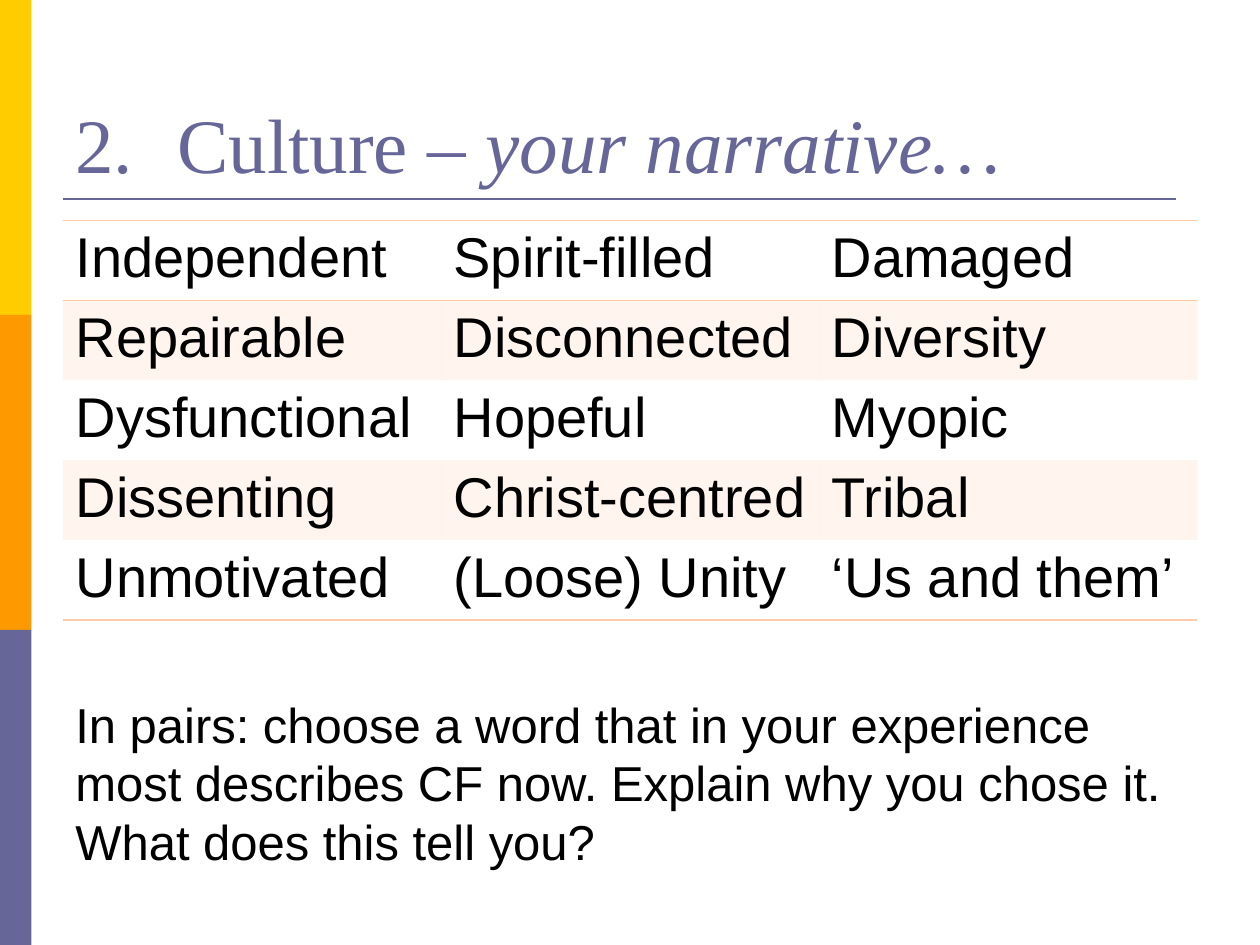
from lxml import etree
from pptx import Presentation
from pptx.dml.color import RGBColor
from pptx.enum.shapes import MSO_CONNECTOR, MSO_SHAPE
from pptx.enum.text import MSO_ANCHOR
from pptx.oxml.ns import qn
from pptx.util import Inches, Pt

RECTANGLE = MSO_SHAPE.RECTANGLE
STRAIGHT = MSO_CONNECTOR.STRAIGHT
TOP = MSO_ANCHOR.TOP
BOTTOM = MSO_ANCHOR.BOTTOM

COLORS = {
    "yellow": "FFCC00",
    "orange": "FF9900",
    "violet": "666699",
    "peach": "FFCAAA",
    "black": "000000",
}
WORDS = [
    ["Independent", "Spirit-filled", "Damaged"],
    ["Repairable", "Disconnected", "Diversity"],
    ["Dysfunctional", "Hopeful", "Myopic"],
    ["Dissenting", "Christ-centred", "Tribal"],
    ["Unmotivated", "(Loose) Unity", "‘Us and them’"],
]
TASK = (
    "In pairs: choose a word that in your experience most describes CF now. "
    "Explain why you chose it. What does this tell you?"
)


class SlideBuilder:
    heading_font = "Times New Roman"
    body_font = "Arial"

    def __init__(self, slide):
        self.slide = slide

    def color(self, name):
        return RGBColor.from_string(COLORS[name])

    def format_run(self, run, size, font, color):
        run.font.size = Pt(size)
        run.font.name = font
        run.font.color.rgb = self.color(color)

    def bar(self, left, top, width, height, color):
        shape = self.slide.shapes.add_shape(
            RECTANGLE, Inches(left), Inches(top), Inches(width), Inches(height))
        shape.shadow.inherit = False
        shape.fill.solid()
        shape.fill.fore_color.rgb = self.color(color)
        shape.line.fill.background()

    def rule(self, left, right, top, color, width):
        connector = self.slide.shapes.add_connector(
            STRAIGHT, Inches(left), Inches(top), Inches(right), Inches(top))
        connector.line.color.rgb = self.color(color)
        connector.line.width = Pt(width)
        etree.SubElement(connector._element.spPr, qn("a:effectLst"))

    def text(self, left, top, width, height, parts, size, font, color, anchor=TOP):
        box = self.slide.shapes.add_textbox(
            Inches(left), Inches(top), Inches(width), Inches(height))
        frame = box.text_frame
        frame.word_wrap = True
        frame.vertical_anchor = anchor
        paragraph = frame.paragraphs[0]
        for content, italic in parts:
            run = paragraph.add_run()
            run.text = content
            run.font.italic = italic
            self.format_run(run, size, font, color)
        return paragraph

    def number(self, paragraph, start, indent):
        properties = paragraph._p.get_or_add_pPr()
        properties.set("marL", str(Inches(indent)))
        properties.set("indent", str(-Inches(indent)))
        etree.SubElement(properties, qn("a:buFont"), typeface="+mj-lt")
        etree.SubElement(
            properties, qn("a:buAutoNum"), type="arabicPeriod", startAt=str(start))

    def border(self, cell, side, color):
        line = etree.SubElement(
            cell._tc.get_or_add_tcPr(), qn(f"a:ln{side}"), w=str(Pt(1)))
        if color is None:
            etree.SubElement(line, qn("a:noFill"))
        else:
            fill = etree.SubElement(line, qn("a:solidFill"))
            etree.SubElement(fill, qn("a:srgbClr"), val=COLORS[color])

    def tint(self, cell, color, percent):
        cell.fill.solid()
        cell.fill.fore_color.rgb = self.color(color)
        value = cell._tc.tcPr.find(f".//{qn('a:solidFill')}[last()]")
        value = cell._tc.tcPr.find(qn("a:solidFill")).find(qn("a:srgbClr"))
        etree.SubElement(value, qn("a:alpha"), val=str(percent * 1000))

    def table(self, left, top, width, row_height, rows, size):
        table = self.slide.shapes.add_table(
            len(rows), len(rows[0]), Inches(left), Inches(top),
            Inches(width), Inches(row_height * len(rows))).table
        table.first_row = False
        table.horz_banding = False
        ruled_edges = {0, 1, len(rows)}
        for row_index, row in enumerate(rows):
            for column_index, word in enumerate(row):
                cell = table.cell(row_index, column_index)
                cell.text_frame.text = word
                run = cell.text_frame.paragraphs[0].runs[0]
                self.format_run(run, size, self.body_font, "black")
                self.border(cell, "L", None)
                self.border(cell, "R", None)
                for side, edge in (("T", row_index), ("B", row_index + 1)):
                    self.border(cell, side, "peach" if edge in ruled_edges else None)
                if row_index % 2:
                    self.tint(cell, "peach", 20)
                else:
                    cell.fill.background()


def main():
    presentation = Presentation()
    presentation.slide_width = Inches(10)
    presentation.slide_height = Inches(7.5)
    builder = SlideBuilder(
        presentation.slides.add_slide(presentation.slide_layouts[6]))

    for index, color in enumerate(("yellow", "orange", "violet")):
        builder.bar(0, 2.5 * index, 0.25, 2.5, color)
    builder.rule(0.5, 9.33, 1.58, "violet", 1.5)
    title = builder.text(
        0.5, 0.3, 9, 1.25, [("Culture – ", False), ("your narrative…", True)],
        44, builder.heading_font, "violet", BOTTOM)
    builder.number(title, 2, 0.81)
    builder.table(0.5, 1.75, 9, 0.6, WORDS, 32)
    builder.text(
        0.5, 5.46, 9, 1.51, [(TASK, False)], 28, builder.body_font, "black")
    presentation.save("out.pptx")


if __name__ == "__main__":
    main()
